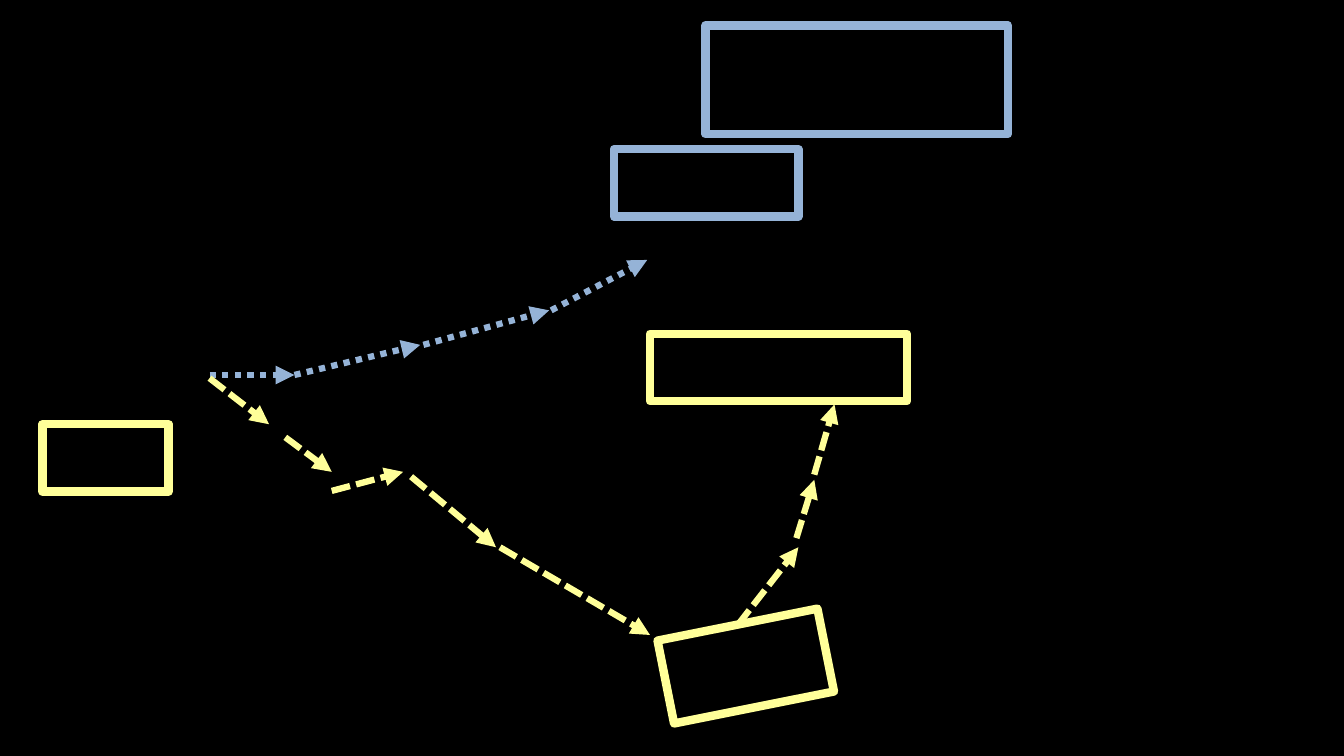
"""Build a black slide where dashed and dotted routes lead between framed areas."""
from typing import NamedTuple

import pptx
import pptx.dml.color
import pptx.enum.dml
import pptx.enum.shapes
import pptx.oxml.ns
import pptx.util
from lxml import etree

Cm = pptx.util.Cm
Dash = pptx.enum.dml.MSO_LINE
COLORS = {"background": "000000", "yellow": "FFFF99", "blue": "95B3D7"}
DASHES = {"yellow": Dash.SQUARE_DOT, "blue": Dash.ROUND_DOT}


class Frame(NamedTuple):
    left: float
    top: float
    width: float
    height: float
    color: str
    rotation: float = 0


class Step(NamedTuple):
    start: tuple[float, float]
    end: tuple[float, float]


START_FRAME = Frame(1.07, 10.69, 3.18, 1.7, "yellow")
TURN_FRAME = Frame(16.74, 15.72, 4.11, 2.13, "yellow", 348.7)
GOAL_FRAME = Frame(16.38, 8.41, 6.48, 1.7, "yellow")
BLUE_FRAMES = [
    Frame(15.47, 3.76, 4.65, 1.7, "blue"),
    Frame(17.78, 0.64, 7.62, 2.74, "blue"),
]
BLUE_ROUTE = [
    Step((5.28, 9.45), (7.42, 9.45)),
    Step((7.42, 9.45), (10.59, 8.69)),
    Step((10.67, 8.69), (13.84, 7.82)),
    Step((13.89, 7.82), (16.31, 6.55)),
]
ROUTE_TO_TURN = [
    Step((5.28, 9.53), (6.78, 10.69)),
    Step((7.19, 11.02), (8.36, 11.89)),
    Step((8.36, 12.37), (10.16, 11.89)),
    Step((10.36, 12.01), (12.5, 13.79)),
    Step((12.6, 13.79), (16.38, 16)),
]
TURN_EXIT = Step((18.59, 15.75), (20.12, 13.79))
ROUTE_TO_GOAL = [
    Step((20.07, 13.56), (20.52, 12.09)),
    Step((20.52, 11.96), (21.03, 10.19)),
]


def rgb(name: str) -> pptx.dml.color.RGBColor:
    return pptx.dml.color.RGBColor.from_string(COLORS[name])


def draw_frame(slide, frame: Frame):
    outline = slide.shapes.add_shape(
        pptx.enum.shapes.MSO_SHAPE.RECTANGLE,
        Cm(frame.left), Cm(frame.top), Cm(frame.width), Cm(frame.height))
    outline.rotation = frame.rotation
    outline.shadow.inherit = False
    outline.fill.background()
    outline.line.color.rgb = rgb(frame.color)
    outline.line.width = pptx.util.Pt(6)
    return outline


def draw_step(slide, step: Step, color: str, origin=None) -> None:
    (x1, y1), (x2, y2) = step
    arrow = slide.shapes.add_connector(
        pptx.enum.shapes.MSO_CONNECTOR.STRAIGHT, Cm(x1), Cm(y1), Cm(x2), Cm(y2))
    if origin is not None:
        arrow.begin_connect(origin, 0)
        arrow.begin_x, arrow.begin_y = Cm(x1), Cm(y1)
    arrow.line.color.rgb = rgb(color)
    arrow.line.width = pptx.util.Pt(4.5)
    arrow.line.dash_style = DASHES[color]
    qn = pptx.oxml.ns.qn
    properties = arrow._element.spPr
    etree.SubElement(properties.find(qn("a:ln")), qn("a:tailEnd"), type="triangle")
    etree.SubElement(properties, qn("a:effectLst"))


def main() -> None:
    deck = pptx.Presentation()
    deck.slide_width, deck.slide_height = Cm(33.87), Cm(19.05)
    slide = deck.slides.add_slide(deck.slide_layouts[6])
    slide.background.fill.solid()
    slide.background.fill.fore_color.rgb = rgb("background")

    for frame in [START_FRAME, *BLUE_FRAMES, GOAL_FRAME]:
        draw_frame(slide, frame)
    turn = draw_frame(slide, TURN_FRAME)

    for step in BLUE_ROUTE:
        draw_step(slide, step, "blue")
    for step in ROUTE_TO_TURN + ROUTE_TO_GOAL:
        draw_step(slide, step, "yellow")
    draw_step(slide, TURN_EXIT, "yellow", origin=turn)

    deck.save("out.pptx")


if __name__ == "__main__":
    main()
